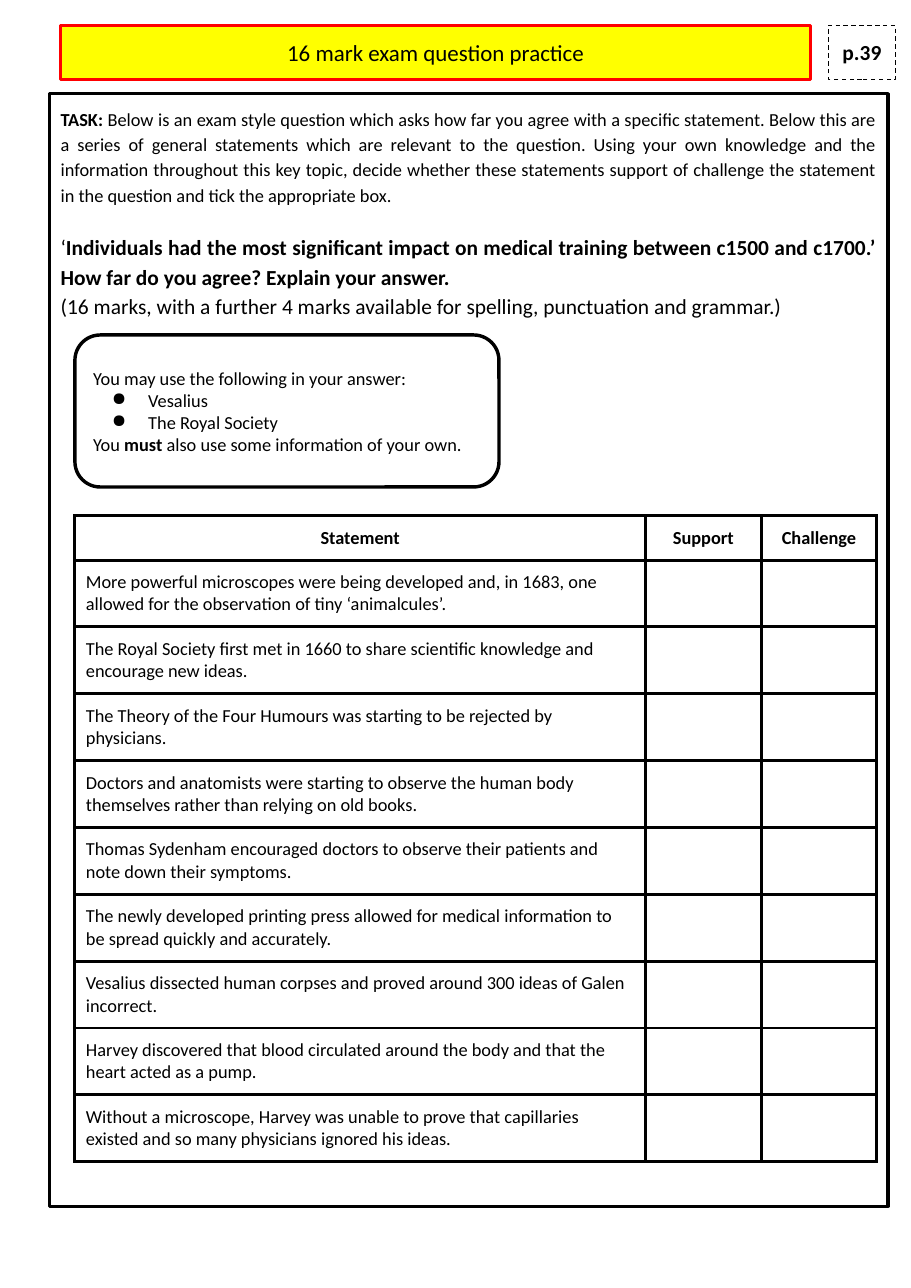
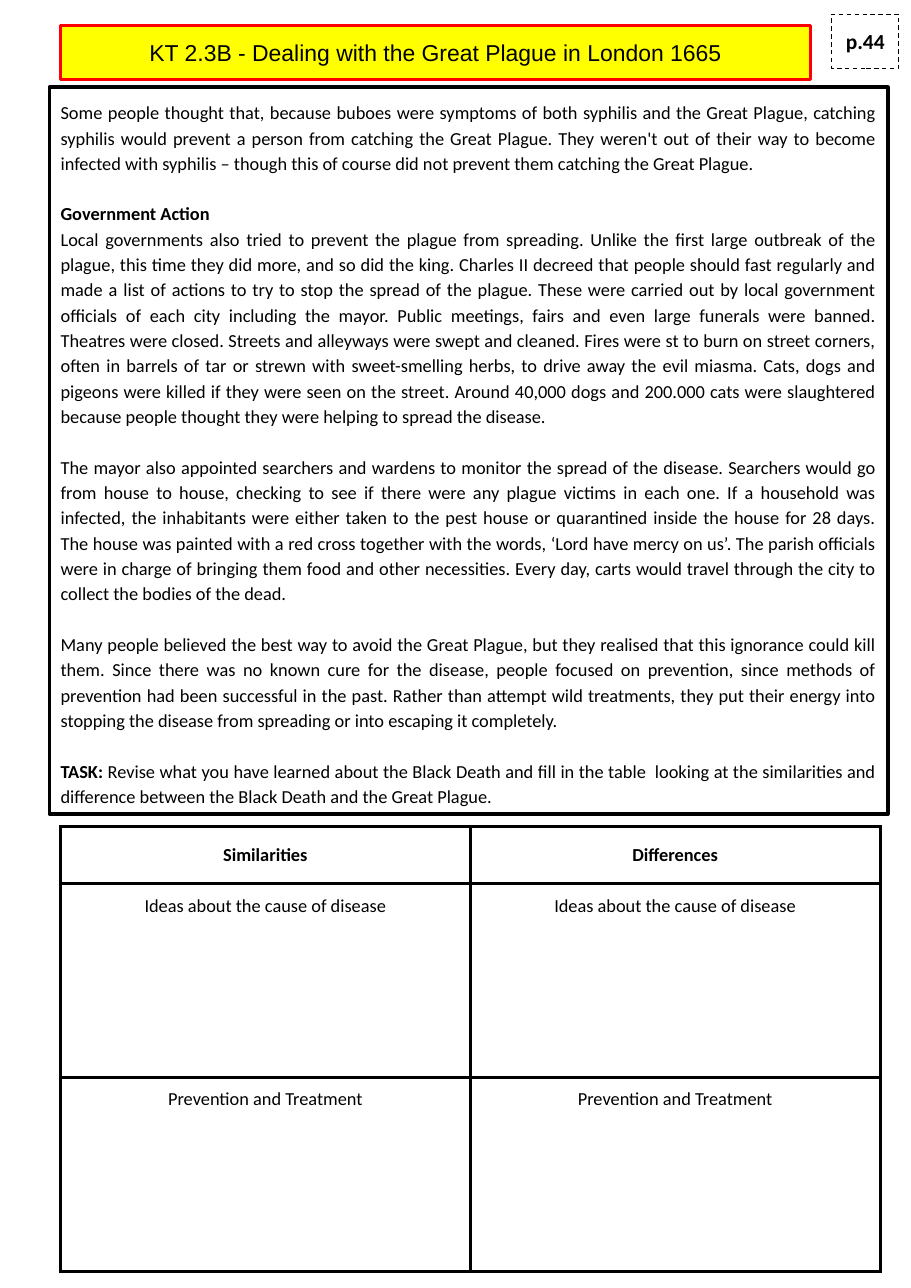
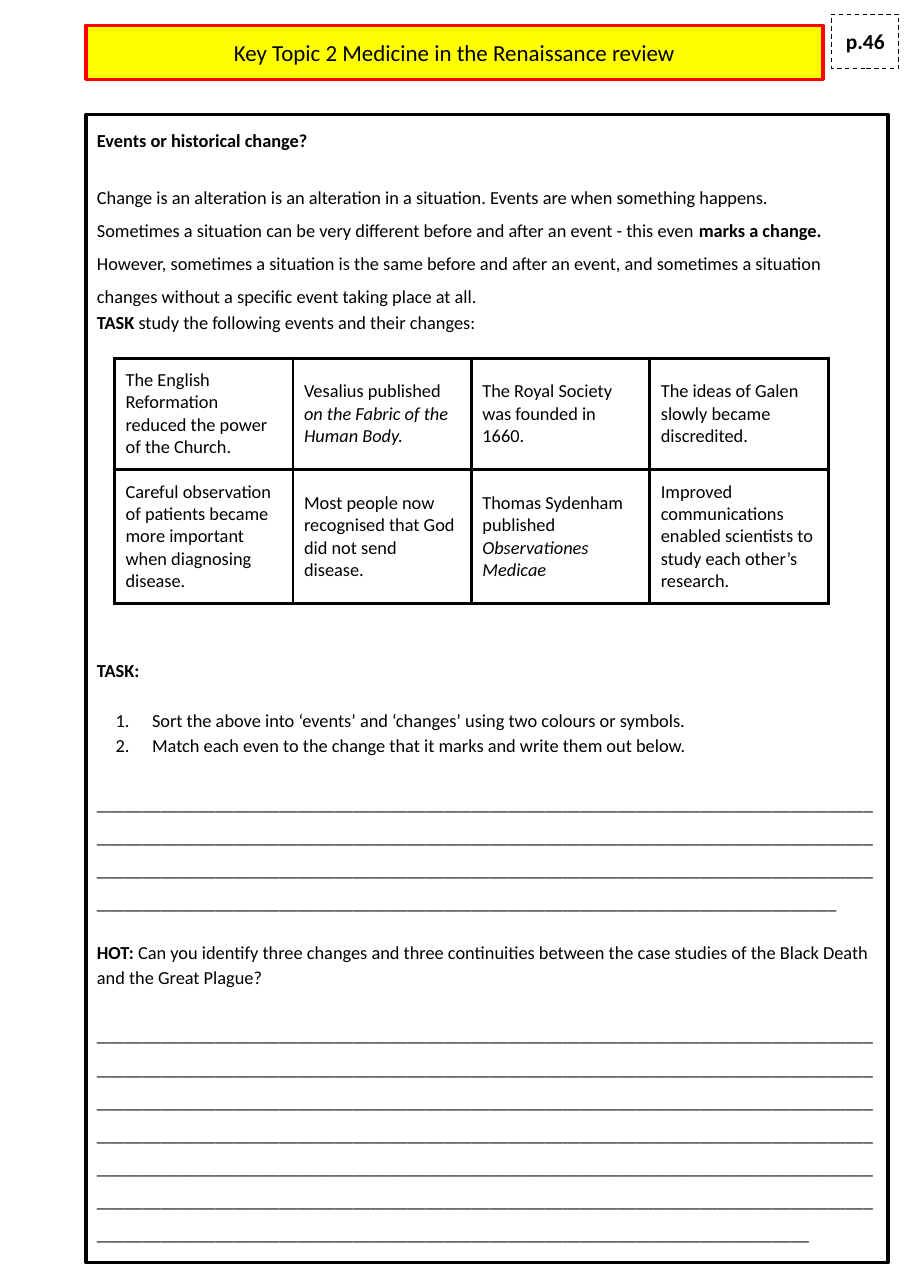
from dataclasses import dataclass

from lxml import etree
from pptx import Presentation
from pptx.dml.color import RGBColor
from pptx.enum.dml import MSO_LINE
from pptx.enum.shapes import MSO_SHAPE as Shape
from pptx.enum.text import MSO_ANCHOR as Anchor, MSO_AUTO_SIZE as AutoSize, PP_ALIGN as Align
from pptx.oxml.ns import qn
from pptx.util import Inches, Pt


# Theme: colours, fonts and sizes
@dataclass(frozen=True)
class Theme:
    ink: str = "000000"
    paper: str = "FFFFFF"
    band: str = "FFFF00"
    band_edge: str = "FF0000"
    font: str = "Calibri"
    title_size: float = 15
    question_size: float = 14
    body_size: float = 12
    frame_width: float = 2.25
    tag_width: float = 0.75
    inset: float = 0.1
    spacing: float = 1.15
    wide_spacing: float = 1.5
    gap: float = 16


THEME = Theme()


# Text helpers
def write(para, text, size=THEME.body_size, font=THEME.font, bold=False, italic=False):
    """Add one formatted run to a paragraph."""
    run = para.add_run()
    run.text = text
    run.font.size = Pt(size)
    run.font.name = font
    run.font.bold = bold
    run.font.italic = italic
    run.font.color.rgb = RGBColor.from_string(THEME.ink)


def bold(text, **style):
    return text, {"bold": True, **style}


def italic(text):
    return text, {"italic": True}


def line(*spans, **layout):
    """Describe a paragraph: plain strings or (text, format) spans, and its layout."""
    return spans, layout


def set_bullet(para, bullet):
    """Give a paragraph a bullet sign, a number ("1.") or nothing."""
    props = para._p.get_or_add_pPr()
    props.set("marL", str(Inches(0.5) if bullet else 0))
    props.set("indent", str(Inches(-0.33) if bullet else 0))
    if bullet == "1.":
        etree.SubElement(props, qn("a:buAutoNum"), type="arabicPeriod")
    elif bullet:
        etree.SubElement(props, qn("a:buChar"), char=bullet)
    else:
        etree.SubElement(props, qn("a:buNone"))


def fill_frame(frame, lines, align=Align.LEFT, spacing=1.0):
    for number, (spans, layout) in enumerate(lines):
        para = frame.add_paragraph() if number else frame.paragraphs[0]
        para.alignment = align
        para.line_spacing = layout.get("spacing", spacing)
        para.space_before = Pt(layout.get("before", 0))
        para.space_after = Pt(0)
        set_bullet(para, layout.get("bullet"))
        for span in spans:
            text, style = (span, {}) if isinstance(span, str) else span
            write(para, text, **style)


class Worksheet:
    """Holds the style and the current slide."""

    def __init__(self, deck, theme=THEME):
        self.deck = deck
        self.theme = theme
        self.page = None

    def new_page(self, title, number, band=(0.55, 0.23, 6.81, 0.49), tag=(7.55, 0.13),
                 font=THEME.font):
        theme = self.theme
        self.page = self.deck.slides.add_slide(self.deck.slide_layouts[1])
        heading = line((title, {"size": theme.title_size, "font": font}))
        self.dress(self.page.shapes.title, band, [heading], fill=theme.band,
                   edge=theme.band_edge, anchor=Anchor.MIDDLE, align=Align.CENTER)
        self.box((*tag, 0.61, 0.49), [line(bold(number, size=theme.question_size))],
                 fill=theme.paper, width=theme.tag_width, dash=MSO_LINE.DASH,
                 align=Align.CENTER)

    def dress(self, shape, place, lines, fill=None, edge=THEME.ink, width=THEME.frame_width,
              dash=None, anchor=Anchor.TOP, **layout):
        """Place a shape, style its outline and set its text."""
        shape.left, shape.top, shape.width, shape.height = map(Inches, place)
        if fill:
            shape.fill.solid()
            shape.fill.fore_color.rgb = RGBColor.from_string(fill)
        else:
            shape.fill.background()
        shape.line.color.rgb = RGBColor.from_string(edge)
        shape.line.width = Pt(width)
        if dash:
            shape.line.dash_style = dash
        frame = shape.text_frame
        frame.word_wrap = True
        frame.auto_size = AutoSize.NONE
        frame.vertical_anchor = anchor
        frame.margin_left = frame.margin_right = Inches(self.theme.inset)
        frame.margin_top = frame.margin_bottom = Inches(self.theme.inset)
        fill_frame(frame, lines, **layout)

    def body(self, place, lines, align=Align.LEFT):
        self.dress(self.page.placeholders[1], place, lines, align=align,
                   spacing=self.theme.spacing)

    def box(self, place, lines, kind=Shape.RECTANGLE, **style):
        shape = self.page.shapes.add_shape(kind, 0, 0, 0, 0)
        shape.shadow.inherit = False
        self.dress(shape, place, lines, anchor=Anchor.MIDDLE, **style)

    def table(self, left, top, columns, heights, rows, header=False,
              align=Align.LEFT, anchor=Anchor.MIDDLE):
        table = self.page.shapes.add_table(
            len(rows), len(columns), Inches(left), Inches(top),
            Inches(sum(columns)), Inches(sum(heights))).table
        table.first_row = header
        table.horz_banding = False
        for column, width in zip(table.columns, columns):
            column.width = Inches(width)
        for number, (row, height, texts) in enumerate(zip(table.rows, heights, rows)):
            row.height = Inches(height)
            heading = header and number == 0
            for cell, content in zip(row.cells, texts):
                self.rule_cell(cell)
                cell.fill.background()
                cell.vertical_anchor = Anchor.MIDDLE if heading else anchor
                cell.margin_left = cell.margin_right = Inches(self.theme.inset)
                cell.margin_top = cell.margin_bottom = Inches(self.theme.inset)
                if content:
                    text = line(bold(content)) if heading else content
                    text = line(text) if isinstance(text, str) else text
                    fill_frame(cell.text_frame, [text], Align.CENTER if heading else align)

    def rule_cell(self, cell):
        props = cell._tc.get_or_add_tcPr()
        for side in ("a:lnL", "a:lnR", "a:lnT", "a:lnB"):
            edge = etree.SubElement(props, qn(side), w=str(Pt(self.theme.frame_width)))
            paint = etree.SubElement(edge, qn("a:solidFill"))
            etree.SubElement(paint, qn("a:srgbClr"), val=self.theme.ink)


# Page 39: exam question
def exam_page(sheet):
    size = {"size": THEME.question_size}
    sheet.new_page("16 mark exam question practice", "p.39", tag=(7.52, 0.23))
    sheet.body((0.45, 0.85, 7.61, 10.1), [
        line(bold("TASK: "), "Below is an exam style question which asks how far you agree with a "
             "specific statement. Below this are a series of general statements which are relevant "
             "to the question. Using your own knowledge and the information throughout this key "
             "topic, decide whether these statements support of challenge the statement in the "
             "question and tick the appropriate box."),
        line(("‘", size), bold("Individuals had the most significant impact on medical training "
             "between c1500 and c1700.’ How far do you agree? Explain your answer.", **size),
             before=THEME.gap),
        line(("(16 marks, with a further 4 marks available for spelling, punctuation and "
              "grammar.)", size)),
    ], align=Align.JUSTIFY)
    sheet.box((0.68, 3.04, 3.85, 1.38), [
        line("You may use the following in your answer:"),
        line("Vesalius", bullet="●"),
        line("The Royal Society", bullet="●"),
        line("You ", bold("must "), "also use some information of your own."),
    ], kind=Shape.ROUNDED_RECTANGLE)
    statements = [
        "More powerful microscopes were being developed and, in 1683, one allowed for the "
        "observation of tiny ‘animalcules’.",
        "The Royal Society first met in 1660 to share scientific knowledge and encourage new "
        "ideas.",
        "The Theory of the Four Humours was starting to be rejected by physicians.",
        "Doctors and anatomists were starting to observe the human body themselves rather than "
        "relying on old books.",
        "Thomas Sydenham encouraged doctors to observe their patients and note down their "
        "symptoms.",
        "The newly developed printing press allowed for medical information to be spread quickly "
        "and accurately.",
        "Vesalius dissected human corpses and proved around 300 ideas of Galen incorrect.",
        "Harvey discovered that blood circulated around the body and that the heart acted as a "
        "pump.",
        "Without a microscope, Harvey was unable to prove that capillaries existed and so many "
        "physicians ignored his ideas.",
    ]
    rows = [("Statement", "Support", "Challenge")] + [(text, "", "") for text in statements]
    sheet.table(0.68, 4.68, [5.18, 1.05, 1.05], [0.4] + [0.6] * len(statements), rows,
                header=True)


# Page 44: the Great Plague
def plague_page(sheet):
    blank_line = 16.5
    sheet.new_page("KT 2.3B - Dealing with the Great Plague in London 1665", "p.44", font="Arial")
    sheet.body((0.45, 0.79, 7.61, 6.6), [
        line("Some people thought that, because buboes were symptoms of both syphilis and the "
             "Great Plague, catching syphilis would prevent a person from catching the Great "
             "Plague. They weren't out of their way to become infected with syphilis – though "
             "this of course did not prevent them catching the Great Plague."),
        line(bold("Government Action"), before=blank_line),
        line("Local governments also tried to prevent the plague from spreading. Unlike the first "
             "large outbreak of the plague, this time they did more, and so did the king. Charles "
             "II decreed that people should fast regularly and made a list of actions to try to "
             "stop the spread of the plague. These were carried out by local government officials "
             "of each city including the mayor. ",
             "Public meetings, fairs and even large funerals "
             "were banned. Theatres were closed. Streets and alleyways were swept and cleaned. "
             "Fires were st to burn on street corners, often in barrels of tar or strewn with "
             "sweet-smelling herbs, to drive away the evil miasma. Cats, dogs and pigeons were "
             "killed if they were seen on the street. Around 40,000 dogs and 200.000 cats were "
             "slaughtered because people thought they were helping to spread the disease."),
        line("The mayor also appointed searchers and wardens to monitor the spread of the "
             "disease. Searchers would go from house to house, checking to see if there were any "
             "plague victims in each one. If a household was infected, the inhabitants were "
             "either taken to the pest house or quarantined inside the house for 28 days. The "
             "house was painted with a red cross together with the words, ‘Lord have mercy on "
             "us’. The parish officials were in charge of bringing them food and other "
             "necessities. Every day, carts would travel through the city to collect the bodies "
             "of the dead.", before=blank_line),
        line("Many people believed the best way to avoid the Great Plague, but they realised that "
             "this ignorance could kill them. Since there was no known cure for the disease, "
             "people focused on prevention, since methods of prevention had been successful in "
             "the past. Rather than attempt wild treatments, they put their energy into stopping "
             "the disease from spreading or into escaping it completely.", before=blank_line),
        line(bold("TASK: "), "Revise what you have learned about the Black Death and fill in the "
             "table  looking at the similarities and difference between the Black Death and the "
             "Great Plague.", before=blank_line),
    ], align=Align.JUSTIFY)
    topics = ["Ideas about the cause of disease", "Prevention and Treatment"]
    rows = [("Similarities", "Differences")] + [(topic, topic) for topic in topics]
    sheet.table(0.55, 7.5, [3.72] * 2, [0.52, 1.76, 1.76], rows, header=True,
                align=Align.CENTER, anchor=Anchor.TOP)


# Page 46: review
def review_page(sheet):
    gap, wide = THEME.gap, THEME.wide_spacing
    table_room = 211
    sheet.new_page("Key Topic 2 Medicine in the Renaissance review", "p.46",
                   band=(0.78, 0.23, 6.69, 0.49))
    sheet.body((0.78, 1.04, 7.28, 10.42), [
        line(bold("Events or historical change?")),
        line("Change is an alteration is an alteration in a situation. Events are when something "
             "happens.", spacing=wide, before=gap),
        line("Sometimes a situation can be very different before and after an event - this even ",
             bold("marks a change."), spacing=wide),
        line("However, sometimes a situation is the same before and after an event, and sometimes "
             "a situation changes without a specific event taking place at all.", spacing=wide),
        line(bold("TASK"), " study the following events and their changes:"),
        line(bold("TASK:"), before=table_room),
        line("Sort the above into ‘events’ and ‘changes’ using two colours or symbols.",
             bullet="1.", before=gap),
        line("Match each even to the change that it marks and write them out below.",
             bullet="1."),
        line("_" * 336, spacing=wide, before=gap),
        line(bold("HOT: "), "Can you identify three changes and three continuities between the "
             "case studies of the Black Death and the Great Plague?", before=gap),
        line("_" * 588, spacing=wide, before=gap),
    ])
    sheet.table(1.04, 3.25, [1.62] * 4, [1.01, 1.21], [
        ("The English Reformation reduced the power of the Church.",
         line("Vesalius published ", italic("on the Fabric of the Human Body.")),
         "The Royal Society was founded in 1660.",
         "The ideas of Galen slowly became discredited."),
        ("Careful observation of patients became more important when diagnosing disease.",
         "Most people now recognised that God did not send disease.",
         line("Thomas Sydenham published ", italic("Observationes Medicae")),
         "Improved communications enabled scientists to study each other’s research."),
    ])


def main():
    deck = Presentation()
    deck.slide_width, deck.slide_height = Inches(8.27), Inches(11.69)
    sheet = Worksheet(deck)
    for build in (exam_page, plague_page, review_page):
        build(sheet)
    deck.save("out.pptx")


if __name__ == "__main__":
    main()
